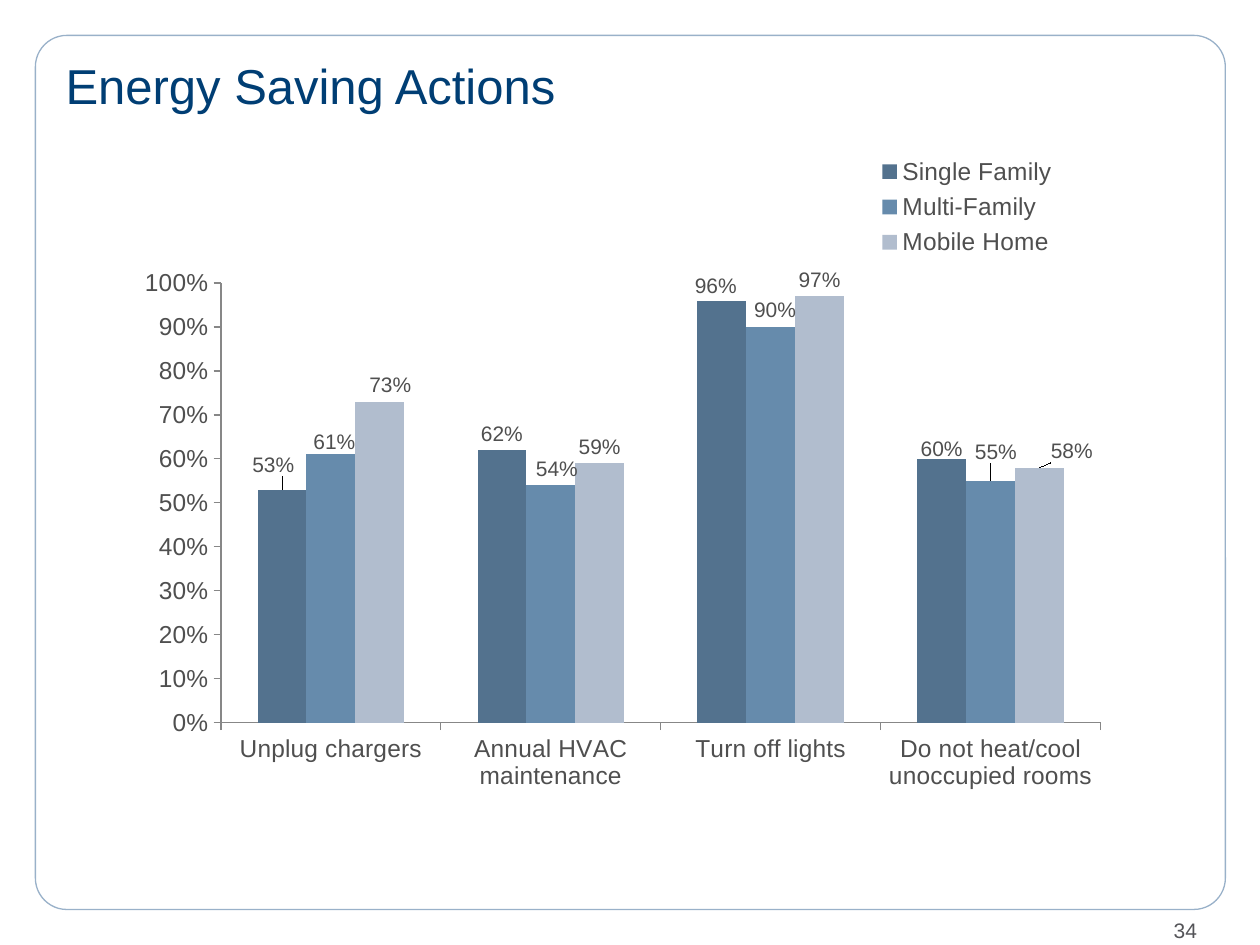
from lxml.etree import SubElement
from pptx import Presentation
from pptx.chart.data import CategoryChartData
from pptx.dml.color import RGBColor
from pptx.enum.chart import XL_CHART_TYPE, XL_LABEL_POSITION, XL_LEGEND_POSITION, XL_TICK_MARK
from pptx.enum.shapes import MSO_SHAPE
from pptx.enum.text import MSO_ANCHOR, PP_ALIGN
from pptx.oxml import parse_xml
from pptx.oxml.ns import nsdecls, qn
from pptx.util import Pt


def color(hex_code):
    return RGBColor.from_string(hex_code)


def manual_layout(**settings):
    """Return a c:layout element holding the given manual layout settings."""
    layout = parse_xml(f"<c:layout {nsdecls('c')}><c:manualLayout/></c:layout>")
    for tag, value in settings.items():
        SubElement(layout[0], qn(f"c:{tag}")).set("val", str(value))
    return layout


CHART_WIDTH, CHART_HEIGHT = 546.5, 406
ACTIONS = ["Unplug chargers", "Annual HVAC maintenance", "Turn off lights",
           "Do not heat/cool unoccupied rooms"]
# Home type, shares, bar colour, label shifts in points by action index
HOME_TYPES = [
    ("Single Family", [0.53, 0.62, 0.96, 0.6], "53728E",
     {0: (-5, -4.5), 2: (-3.5, 1), 3: (0, 4)}),
    ("Multi-Family", [0.61, 0.54, 0.9, 0.55], "668BAC",
     {0: (2, 2.5), 1: (3.5, 0), 2: (2.5, -0.5), 3: (3, -7)}),
    ("Mobile Home", [0.73, 0.59, 0.97, 0.58], "B1BDCE",
     {0: (6, 0), 3: (18.5, 0)}),
]

presentation = Presentation()
presentation.slide_width, presentation.slide_height = Pt(720), Pt(540)
slide = presentation.slides.add_slide(presentation.slide_layouts[5])

# Frame
frame = slide.shapes.add_shape(MSO_SHAPE.ROUNDED_RECTANGLE, Pt(20.2), Pt(20.2), Pt(680), Pt(499.5))
frame.adjustments[0] = 0.036
frame.shadow.inherit = False
frame.fill.background()
frame.line.color.rgb = color("99B1C9")
frame.line.width = Pt(0.75)

# Title and page number
title = slide.shapes.title
title.left, title.top, title.width, title.height = Pt(37.5), Pt(28.8), Pt(638), Pt(39.6)
page_number = slide.shapes.add_textbox(Pt(583.2), Pt(523.5), Pt(100.8), Pt(16.5))
for holder, words, size, ink, alignment in [
    (title, "Energy Saving Actions", 28, "003E74", PP_ALIGN.LEFT),
    (page_number, "34", 12, "545458", PP_ALIGN.RIGHT),
]:
    frame_text = holder.text_frame
    frame_text.word_wrap = True
    frame_text.vertical_anchor = MSO_ANCHOR.MIDDLE
    frame_text.margin_left = frame_text.margin_right = 0
    frame_text.margin_top = frame_text.margin_bottom = 0
    frame_text.text = words
    paragraph = frame_text.paragraphs[0]
    paragraph.alignment = alignment
    paragraph.font.name = "Arial"
    paragraph.font.size = Pt(size)
    paragraph.font.color.rgb = color(ink)

# Chart
shares = CategoryChartData(number_format="0%")
shares.categories = ACTIONS
for home_type, values, _, _ in HOME_TYPES:
    shares.add_series(home_type, values)
chart = slide.shapes.add_chart(
    XL_CHART_TYPE.COLUMN_CLUSTERED, Pt(82.8), Pt(65.5), Pt(CHART_WIDTH), Pt(CHART_HEIGHT), shares
).chart
chart.has_title = False
chart.font.name = "Arial"
chart.font.size = Pt(18)
chart.font.color.rgb = color("4F4F4F")

for axis in (chart.category_axis, chart.value_axis):
    axis.has_major_gridlines = False
    axis.major_tick_mark = XL_TICK_MARK.OUTSIDE
    axis.minor_tick_mark = XL_TICK_MARK.NONE
    axis.tick_labels.font.size = Pt(14)
    axis.format.line.color.rgb = color("878787")
    axis.format.line.width = Pt(0.75)
chart.value_axis.minimum_scale = 0
chart.value_axis.maximum_scale = 1
chart.value_axis.major_unit = 0.1
chart.value_axis.tick_labels.number_format = "0%"
chart.value_axis.tick_labels.number_format_is_linked = False

chart.has_legend = True
legend = chart.legend
legend.position = XL_LEGEND_POSITION.RIGHT
legend.include_in_layout = False
legend.font.size = Pt(14)
for old_layout in legend._element.findall(qn("c:layout")):
    legend._element.remove(old_layout)
legend._element.find(qn("c:legendPos")).addnext(
    manual_layout(xMode="edge", yMode="edge", x=0.76, y=0.05, w=0.2, h=0.16))

plot = chart.plots[0]
plot.gap_width = 150
plot.overlap = 0
plot.vary_by_categories = False
plot_area = plot._element.getparent()
for old_layout in plot_area.findall(qn("c:layout")):
    plot_area.remove(old_layout)
plot_area.insert(0, manual_layout(layoutTarget="inner", xMode="edge", yMode="edge",
                                  x=0.078, y=0.237, w=0.922, h=0.619))

for series, (_, _, fill, shifts) in zip(plot.series, HOME_TYPES):
    series.format.fill.solid()
    series.format.fill.fore_color.rgb = color(fill)
    labels = series.data_labels
    labels.show_value = True
    labels.number_format = "0%"
    labels.number_format_is_linked = False
    labels.position = XL_LABEL_POSITION.OUTSIDE_END
    labels.font.size = Pt(12)
    for index, (shift_x, shift_y) in shifts.items():
        label = series.points[index].data_label
        label.position = XL_LABEL_POSITION.OUTSIDE_END
        label.font.size = Pt(12)
        point_label = series._element.xpath(f".//c:dLbl[c:idx/@val='{index}']")[0]
        point_label.find(qn("c:idx")).addnext(
            manual_layout(x=round(shift_x / CHART_WIDTH, 4), y=round(shift_y / CHART_HEIGHT, 4)))

presentation.save("out.pptx")
